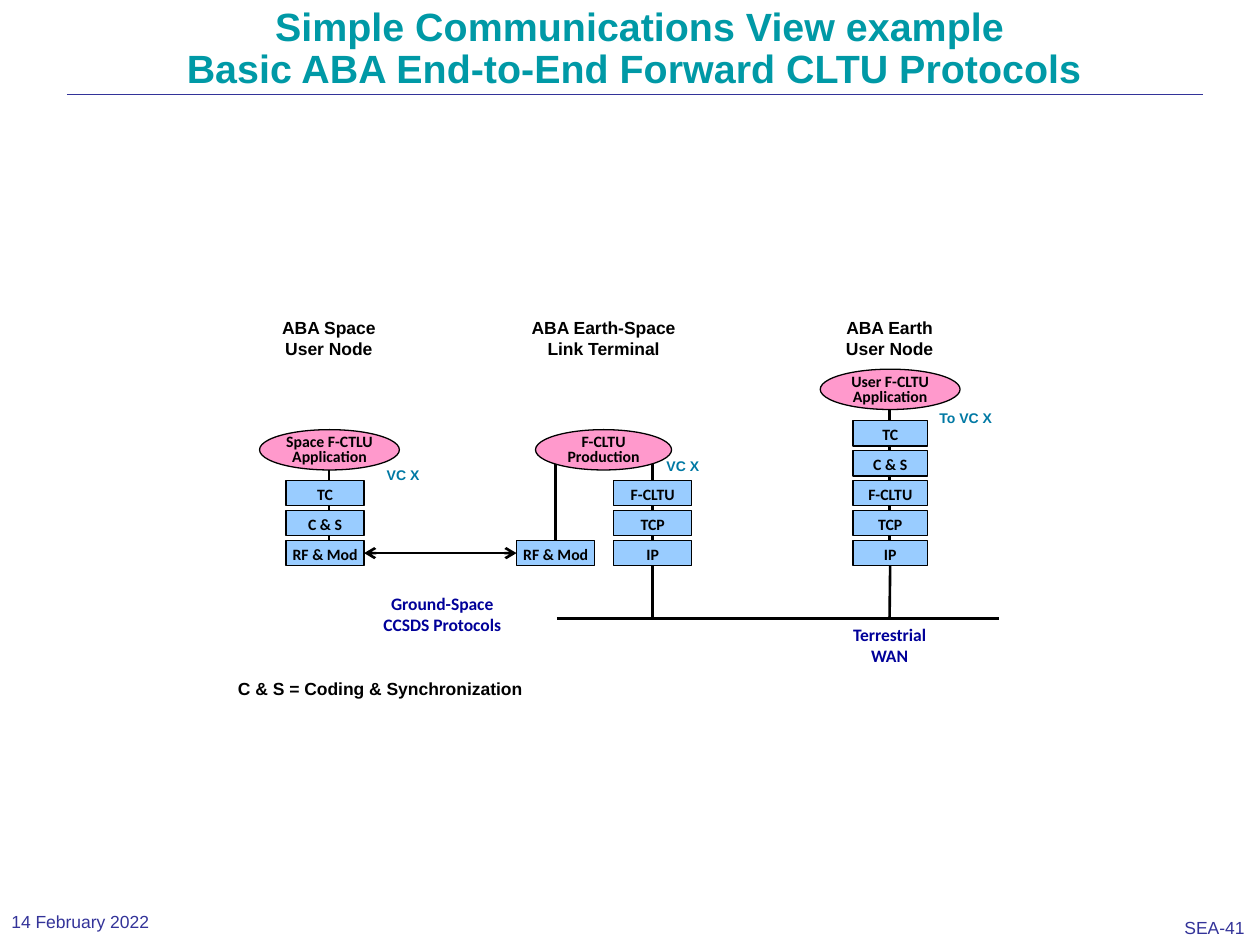
from lxml import etree
from pptx import Presentation
from pptx import util as u
from pptx.dml import color
from pptx.enum import shapes, text
from pptx.oxml import ns

INK, NAVY, TEAL, INDIGO = "000000", "000099", "0079A4", "333399"


def write(shape, content, size, font, hue, bold=True, align="CENTER", spacing=None,
          anchor="TOP", wrap=True, insets=(0.1, 0.05)):
    frame = shape.text_frame
    frame.text = content
    frame.word_wrap = wrap
    frame.vertical_anchor = text.MSO_ANCHOR[anchor]
    frame.margin_left = frame.margin_right = u.Inches(insets[0])
    frame.margin_top = frame.margin_bottom = u.Inches(insets[1])
    for paragraph in frame.paragraphs:
        paragraph.alignment = text.PP_ALIGN[align]
        paragraph.line_spacing = spacing
        for run in paragraph.runs:
            run.font.size, run.font.name, run.font.bold = u.Pt(size), font, bold
            run.font.color.rgb = color.RGBColor.from_string(hue)


def connect(x1, y1, x2, y2, hue=INK, width=1.5):
    connector = slide.shapes.add_connector(
        shapes.MSO_CONNECTOR.STRAIGHT, *[u.Inches(v) for v in (x1, y1, x2, y2)])
    connector.line.color.rgb = color.RGBColor.from_string(hue)
    connector.line.width = u.Pt(width)
    etree.SubElement(connector._element.spPr, ns.qn("a:effectLst"))
    return connector


presentation = Presentation()
presentation.slide_width, presentation.slide_height = u.Inches(10), u.Inches(7.5)
slide = presentation.slides.add_slide(presentation.slide_layouts[5])

title = slide.shapes.title
title.left, title.top, title.width, title.height = [u.Inches(v) for v in (0.83, -0.02, 8.5, 0.83)]
write(title, "Simple Communications View example\vBasic ABA End-to-End Forward CLTU Protocols ",
      22.5, "Arial", "0099A6", spacing=0.9, anchor="MIDDLE")
connect(0.53, 0.75, 9.55, 0.75, INDIGO, 0.13)

wan_y, box_bottom, box_top = 4.91, 4.49, 4.29
connect(4.42, wan_y, 7.93, wan_y)
terminal_drop = connect(5.18, box_bottom, 5.18, wan_y)
earth_drop = connect(7.06, box_bottom, 7.06, wan_y)
connect(2.61, 3.73, 2.61, box_top)
radio_link = connect(4.41, 3.68, 4.41, box_top)
connect(5.18, 3.68, 5.18, box_top)
connect(7.06, 3.25, 7.06, box_top)

stacks = {
    "space": (2.27, 0.62, ["RF & Mod", "C & S", "TC"]),
    "radio": (4.1, 0.62, ["RF & Mod"]),
    "terminal": (4.87, 0.62, ["IP", "TCP", "F-CLTU"]),
    "earth": (6.77, 0.59, ["IP", "TCP", "F-CLTU", "C & S", "TC"]),
}
applications = [
    (2.06, 3.41, 1.11, "Space F-CTLU\nApplication"),
    (4.25, 3.41, 1.08, "F-CLTU\nProduction"),
    (6.51, 2.93, 1.11, "User F-CLTU\nApplication"),
]
blocks = [("ellipse", left, top, width, 0.32, label) for left, top, width, label in applications]
for node, (left, width, layers) in stacks.items():
    for level, label in enumerate(layers):
        blocks.append((node, left, box_top - level * 0.2375, width, 0.2, label))

bottom_boxes = {}
for kind, left, top, width, height, label in blocks:
    oval = kind == "ellipse"
    block = slide.shapes.add_shape(
        shapes.MSO_SHAPE.OVAL if oval else shapes.MSO_SHAPE.RECTANGLE,
        *[u.Inches(v) for v in (left, top, width, height)])
    block.shadow.inherit = False
    block.fill.solid()
    block.fill.fore_color.rgb = color.RGBColor.from_string("FF99CC" if oval else "99CCFF")
    block.line.color.rgb = color.RGBColor.from_string(INK)
    block.line.width = u.Pt(0.75)
    write(block, label, 9, "Calibri", INK, spacing=0.8 if oval else None,
          insets=(0, 0) if oval else (0.04, 0.03))
    bottom_boxes.setdefault(kind, block)

terminal_drop.begin_connect(bottom_boxes["terminal"], 2)
earth_drop.begin_connect(bottom_boxes["earth"], 2)
radio_link.end_connect(bottom_boxes["radio"], 0)
space_link = connect(2.89, 4.39, 4.1, 4.39)
space_link.begin_connect(bottom_boxes["space"], 3)
space_link.end_connect(bottom_boxes["radio"], 1)
for end in ("a:headEnd", "a:tailEnd"):
    etree.SubElement(space_link.line._get_or_add_ln(), ns.qn(end), type="arrow")

labels = [
    (2.03, 2.47, 1.16, 0.44, "ABA Space User Node", 10, "Arial", INK, {}),
    (4.09, 2.47, 1.4, 0.44, "ABA Earth-Space\nLink Terminal", 10, "Arial", INK, {}),
    (6.45, 2.47, 1.22, 0.44, "ABA Earth User Node", 10, "Arial", INK, {}),
    (2.86, 4.66, 1.3, 0.43, "Ground-Space\nCCSDS Protocols", 10, "Calibri", NAVY, {}),
    (6.49, 4.9, 1.14, 0.44, "Terrestrial\nWAN", 10, "Calibri", NAVY, {}),
    (2.97, 3.65, 0.46, 0.24, "VC X", 8, "Arial", TEAL, {"wrap": False}),
    (5.19, 3.58, 0.46, 0.24, "VC X", 8, "Arial", TEAL, {"wrap": False}),
    (7.35, 3.2, 0.63, 0.24, "To VC X", 8, "Arial", TEAL, {"wrap": False}),
    (1.79, 5.33, 2.49, 0.27, "C & S = Coding & Synchronization", 10, "Arial", INK,
     {"wrap": False, "align": "LEFT"}),
    (0, 7.17, 1.89, 0.29, "14 February 2022", 10, "Arial", INDIGO,
     {"wrap": False, "align": "LEFT", "bold": False, "anchor": "MIDDLE", "insets": (0.09, 0.05)}),
    (9.31, 7.24, 0.68, 0.26, "SEA-41", 10, "Arial", INDIGO,
     {"wrap": False, "align": "LEFT", "bold": False, "insets": (0.09, 0.04)}),
]
for left, top, width, height, content, size, font, hue, options in labels:
    box = slide.shapes.add_textbox(*[u.Inches(v) for v in (left, top, width, height)])
    write(box, content, size, font, hue, **options)

presentation.save("out.pptx")
